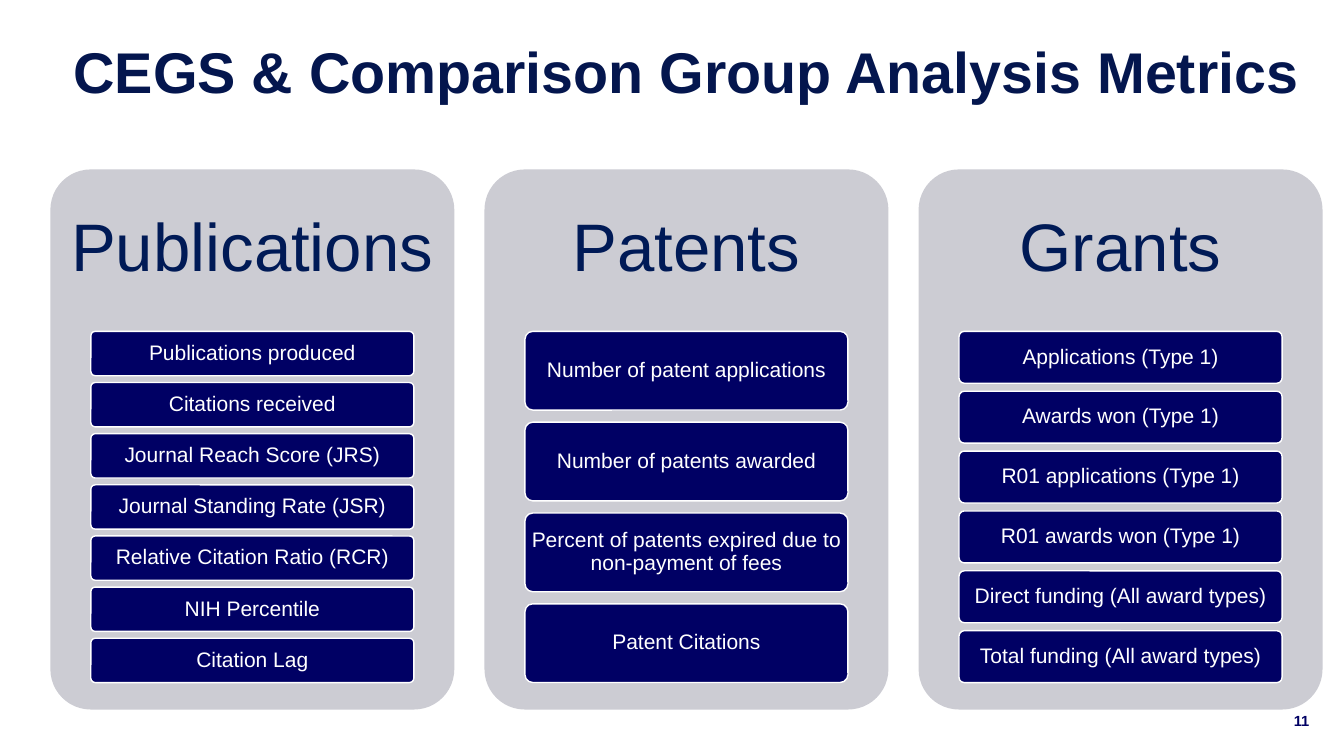
from dataclasses import dataclass

from pptx import Presentation
from pptx.dml.color import RGBColor
from pptx.enum.shapes import MSO_SHAPE
from pptx.enum.text import MSO_ANCHOR, MSO_AUTO_SIZE, PP_ALIGN
from pptx.util import Cm, Pt

ROUNDED = MSO_SHAPE.ROUNDED_RECTANGLE
TOP, MIDDLE = MSO_ANCHOR.TOP, MSO_ANCHOR.MIDDLE
LEFT, CENTER = PP_ALIGN.LEFT, PP_ALIGN.CENTER
NO_AUTOFIT = MSO_AUTO_SIZE.NONE

FONT = "Arial"
NAVY = "000064"
WHITE = "FFFFFF"

# Layout in centimetres
CARD_X, CARD_Y, CARD_W, CARD_H = 1.27, 4.27, 10.18, 13.61
CARD_PITCH = 10.94
ITEM_INDENT = 1.02
ITEMS_Y, ITEMS_H = 8.35, 8.85
GAP_RATIO = 2 / 13  # gap between items relative to item height


@dataclass
class Card:
    heading: str
    items: list[str]


CARDS = [
    Card("Publications", [
        "Publications produced",
        "Citations received",
        "Journal Reach Score (JRS)",
        "Journal Standing Rate (JSR)",
        "Relative Citation Ratio (RCR)",
        "NIH Percentile",
        "Citation Lag",
    ]),
    Card("Patents", [
        "Number of patent applications",
        "Number of patents awarded",
        "Percent of patents expired due to non-payment of fees",
        "Patent Citations",
    ]),
    Card("Grants", [
        "Applications (Type 1)",
        "Awards won (Type 1)",
        "R01 applications (Type 1)",
        "R01 awards won (Type 1)",
        "Direct funding (All award types)",
        "Total funding (All award types)",
    ]),
]


def color(value: str) -> RGBColor:
    return RGBColor.from_string(value)


def write(sp, text: str, *, size: float, fg: str, bold: bool = False,
          align=LEFT, anchor=MIDDLE, spacing: float = 0.9,
          insets: tuple = (0.25, 0.13, 0.25, 0.13)) -> None:
    tf = sp.text_frame
    tf.auto_size = NO_AUTOFIT
    tf.word_wrap = True
    tf.vertical_anchor = anchor
    tf.margin_left, tf.margin_top, tf.margin_right, tf.margin_bottom = map(Cm, insets)
    p = tf.paragraphs[0]
    p.alignment = align
    p.line_spacing = spacing
    r = p.add_run()
    r.text = text
    r.font.name = FONT
    r.font.size = Pt(size)
    r.font.bold = bold
    r.font.color.rgb = color(fg)


def add_box(slide, x: float, y: float, w: float, h: float, fill: str,
            line: str | None = None):
    sp = slide.shapes.add_shape(ROUNDED, Cm(x), Cm(y), Cm(w), Cm(h))
    sp.adjustments[0] = 0.1
    sp.shadow.inherit = False
    sp.fill.solid()
    sp.fill.fore_color.rgb = color(fill)
    if line:
        sp.line.color.rgb = color(line)
        sp.line.width = Pt(1)
    else:
        sp.line.fill.background()
    return sp


def add_card(slide, card: Card, x: float) -> None:
    sp = add_box(slide, x, CARD_Y, CARD_W, CARD_H, "CCCCD3")
    write(sp, card.heading, size=48, fg="001A56", align=CENTER,
          insets=(0.2, 0.2, 0.2, 9.76))
    n = len(card.items)
    h = ITEMS_H / (n + (n - 1) * GAP_RATIO)
    for i, item in enumerate(card.items):
        y = ITEMS_Y + i * h * (1 + GAP_RATIO)
        sp = add_box(slide, x + ITEM_INDENT, y, CARD_W - 2 * ITEM_INDENT, h,
                     NAVY, WHITE)
        write(sp, item, size=15, fg=WHITE, align=CENTER,
              insets=(0.09, 0.09, 0.09, 0.09))


def main() -> None:
    prs = Presentation()
    prs.slide_width, prs.slide_height = Cm(33.87), Cm(19.05)
    slide = prs.slides.add_slide(prs.slide_layouts[5])

    # Title
    title = slide.shapes.title
    title.left, title.top, title.width, title.height = map(Cm, (1.6, 0.97, 32.59, 3.76))
    write(title, "CEGS & Comparison Group Analysis Metrics", size=41,
          fg="04164E", bold=True, anchor=TOP)

    # Metric cards
    for i, card in enumerate(CARDS):
        add_card(slide, card, CARD_X + i * CARD_PITCH)

    # Slide number
    number = slide.shapes.add_textbox(Cm(32.36), Cm(17.65), Cm(0.97), Cm(1.02))
    write(number, "11", size=10.5, fg=NAVY, bold=True, spacing=1.0)

    prs.save("out.pptx")


if __name__ == "__main__":
    main()
